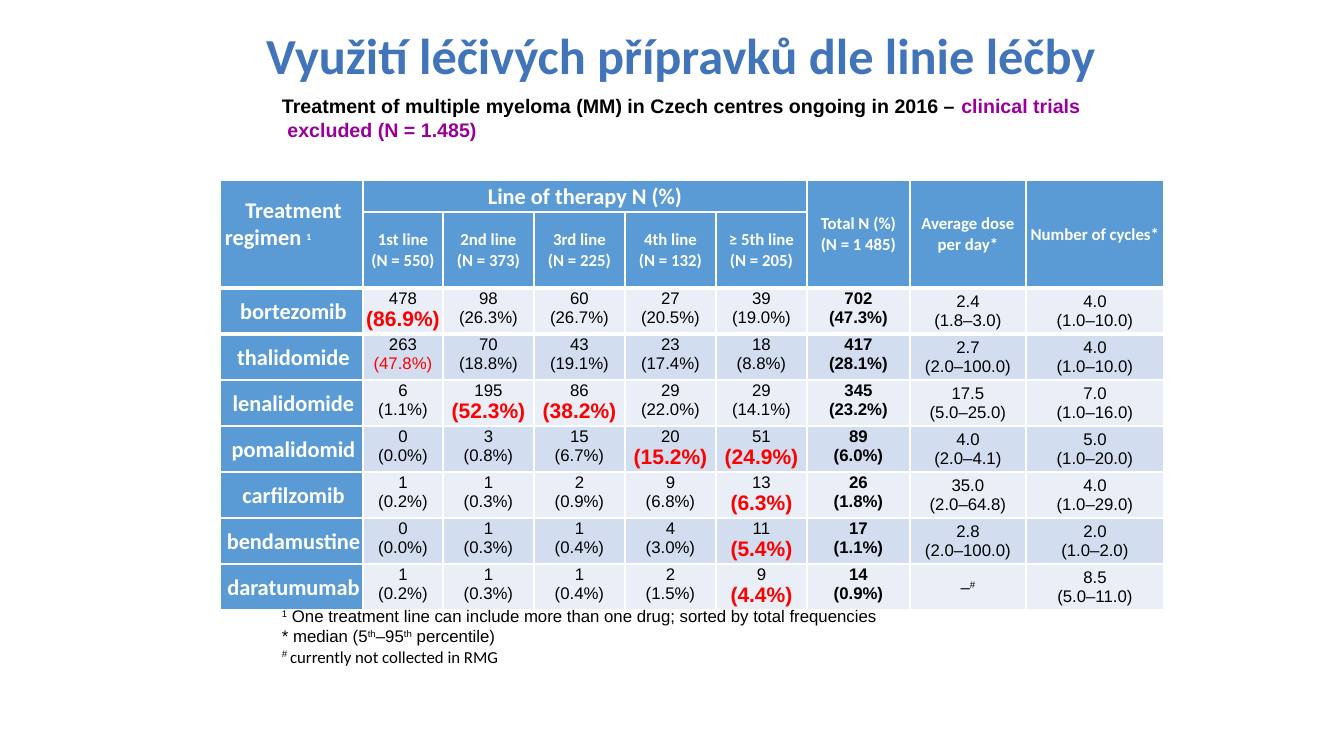
from lxml import etree
from pptx import Presentation
from pptx import util as u
from pptx.dml.color import RGBColor
from pptx.enum import text
from pptx.oxml import ns

PX = 12192000 / 1344
WHITE = RGBColor(0xFF, 0xFF, 0xFF)
BLACK = RGBColor(0, 0, 0)
RED = RGBColor(0xFF, 0, 0)
PURPLE = RGBColor(0x99, 0x00, 0x99)
TITLE_BLUE = RGBColor(0x42, 0x74, 0xB9)
HEADER_BLUE = RGBColor(0x5B, 0x9B, 0xD5)
BANDS = (RGBColor(0xEA, 0xEF, 0xF7), RGBColor(0xD2, 0xDE, 0xEF))

LEFT, CENTER = text.PP_ALIGN.LEFT, text.PP_ALIGN.CENTER
COLUMN_WIDTHS = (143, 80, 91, 91, 91, 91, 103, 116, 138)
ROW_HEIGHTS = (32, 76) + (46,) * 7
LINES = ("1st line\n(N = 550)", "2nd line\n(N = 373)", "3rd line\n(N = 225)",
         "4th line\n(N = 132)", "≥ 5th line\n(N = 205)")
SUMMARIES = ("Total N (%)\n(N = 1 485)", "Average dose per day*", "Number of cycles*")
REGIMENS = {
    "bortezomib": ("478 (86.9%)", "98 (26.3%)", "60 (26.7%)", "27 (20.5%)", "39 (19.0%)",
                   "702 (47.3%)", "2.4 (1.8–3.0)", "4.0 (1.0–10.0)"),
    "thalidomide": ("263 (47.8%)", "70 (18.8%)", "43 (19.1%)", "23 (17.4%)", "18 (8.8%)",
                    "417 (28.1%)", "2.7 (2.0–100.0)", "4.0 (1.0–10.0)"),
    "lenalidomide": ("6 (1.1%)", "195 (52.3%)", "86 (38.2%)", "29 (22.0%)", "29 (14.1%)",
                     "345 (23.2%)", "17.5 (5.0–25.0)", "7.0 (1.0–16.0)"),
    "pomalidomid": ("0 (0.0%)", "3 (0.8%)", "15 (6.7%)", "20 (15.2%)", "51 (24.9%)",
                    "89 (6.0%)", "4.0 (2.0–4.1)", "5.0 (1.0–20.0)"),
    "carfilzomib": ("1 (0.2%)", "1 (0.3%)", "2 (0.9%)", "9 (6.8%)", "13 (6.3%)",
                    "26 (1.8%)", "35.0 (2.0–64.8)", "4.0 (1.0–29.0)"),
    "bendamustine": ("0 (0.0%)", "1 (0.3%)", "1 (0.4%)", "4 (3.0%)", "11 (5.4%)",
                     "17 (1.1%)", "2.8 (2.0–100.0)", "2.0 (1.0–2.0)"),
    "daratumumab": ("1 (0.2%)", "1 (0.3%)", "1 (0.4%)", "2 (1.5%)", "9 (4.4%)",
                    "14 (0.9%)", "–#", "8.5 (5.0–11.0)"),
}
TOTAL_COLUMN = 6
BOLD_RED = {"86.9", "52.3", "38.2", "15.2", "24.9", "6.3", "5.4", "4.4"}
PLAIN_RED = {"47.8"}


def px(length):
    return u.Emu(round(length * PX))


def style(run, size=12, font="Arial", color=BLACK, bold=False, raised=False):
    run.font.size = u.Pt(size)
    run.font.name = font
    run.font.color.rgb = color
    run.font.bold = bold
    if raised:
        run._r.get_or_add_rPr().set("baseline", "30000")


def write(frame, paragraphs, align=LEFT):
    for index, pieces in enumerate(paragraphs):
        paragraph = frame.paragraphs[0] if index == 0 else frame.add_paragraph()
        paragraph.alignment = align
        for words, look in pieces:
            run = paragraph.add_run()
            run.text = words
            style(run, **look)


def place_title(slide, left, top, width, height):
    title = slide.shapes.title
    title.left, title.top, title.width, title.height = map(px, (left, top, width, height))
    frame = title.text_frame
    frame.text = "Využití léčivých přípravků dle linie léčby"
    frame.vertical_anchor = text.MSO_ANCHOR.MIDDLE
    frame.auto_size = text.MSO_AUTO_SIZE.NONE
    frame.paragraphs[0].alignment = LEFT
    frame.paragraphs[0].line_spacing = 0.9
    style(frame.paragraphs[0].runs[0], 36, "Calibri", TITLE_BLUE, True)


def place_text(slide, box, paragraphs, wrap):
    frame = slide.shapes.add_textbox(*map(px, box)).text_frame
    frame.word_wrap = wrap
    frame.auto_size = text.MSO_AUTO_SIZE.SHAPE_TO_FIT_TEXT
    write(frame, paragraphs)


def place_subtitle(slide, *box):
    black = dict(size=14, bold=True)
    purple = dict(black, color=PURPLE)
    place_text(slide, box, [
        [("Treatment of multiple myeloma (MM) in Czech centres ongoing in 2016 – ", black),
         ("clinical trials", purple)],
        [(" excluded (N = 1.485)", purple)],
    ], False)


def place_footnotes(slide, *box):
    raised = dict(raised=True)
    place_text(slide, box, [
        [("1", raised),
         (" One treatment line can include more than one drug; sorted by total frequencies", {})],
        [("* median (5", {}), ("th", raised), ("–95", {}), ("th", raised), (" percentile)", {})],
        [("# ", raised), ("currently not collected in RMG", dict(font="Calibri"))],
    ], True)


def draw_borders(cell, top, bottom):
    properties = cell._tc.get_or_add_tcPr()
    for side, points in (("L", 1), ("R", 1), ("T", top), ("B", bottom)):
        line = etree.SubElement(properties, ns.qn("a:ln" + side), w=str(u.Pt(points)))
        fill = etree.SubElement(line, ns.qn("a:solidFill"))
        etree.SubElement(fill, ns.qn("a:srgbClr"), val=str(WHITE))


def fill_cell(cell, color, paragraphs, align=CENTER, anchor=text.MSO_ANCHOR.MIDDLE):
    cell.fill.solid()
    cell.fill.fore_color.rgb = color
    cell.vertical_anchor = anchor
    cell.margin_left = cell.margin_right = cell.margin_top = px(1)
    cell.margin_bottom = 0
    write(cell.text_frame, paragraphs, align)


def header_lines(words, size=12):
    look = dict(size=size, font="Calibri", color=WHITE, bold=True)
    return [[(line, look)] for line in words.split("\n")]


def fill_header(table):
    corner = table.cell(0, 0)
    corner.merge(table.cell(1, 0))
    table.cell(0, 1).merge(table.cell(0, 5))
    regimen = header_lines("Treatment\nregimen ", 16)
    regimen[1].append(("1", dict(font="Calibri", color=WHITE, bold=True, raised=True)))
    fill_cell(corner, HEADER_BLUE, regimen)
    corner.margin_left, corner.margin_bottom = px(5), px(20)
    corner.text_frame.paragraphs[1].alignment = LEFT
    fill_cell(table.cell(0, 1), HEADER_BLUE, header_lines("Line of therapy N (%)", 16))
    for column, words in enumerate(LINES, 1):
        fill_cell(table.cell(1, column), HEADER_BLUE, header_lines(words))
    for column, words in enumerate(SUMMARIES, TOTAL_COLUMN):
        table.cell(0, column).merge(table.cell(1, column))
        fill_cell(table.cell(0, column), HEADER_BLUE, header_lines(words))


def figure_lines(figure, column):
    if figure == "–#":
        return [[("–", {}), ("#", dict(raised=True))]]
    value, detail = figure.split(" ")
    look = dict(bold=column == TOTAL_COLUMN)
    share = detail.strip("(%)")
    detail_look = look
    if column < TOTAL_COLUMN and share in BOLD_RED:
        detail_look = dict(size=15, color=RED, bold=True)
    elif column < TOTAL_COLUMN and share in PLAIN_RED:
        detail_look = dict(color=RED)
    return [[(value, look)], [(detail, detail_look)]]


def fill_regimens(table):
    for index, (drug, figures) in enumerate(REGIMENS.items()):
        name = table.cell(index + 2, 0)
        fill_cell(name, HEADER_BLUE, header_lines(drug, 16))
        name.margin_left = px(5)
        for column, figure in enumerate(figures, 1):
            anchor = text.MSO_ANCHOR.MIDDLE if column > TOTAL_COLUMN else text.MSO_ANCHOR.TOP
            fill_cell(table.cell(index + 2, column), BANDS[index % 2],
                      figure_lines(figure, column), anchor=anchor)


def place_table(slide, left, top):
    table = slide.shapes.add_table(
        len(ROW_HEIGHTS), len(COLUMN_WIDTHS), px(left), px(top),
        px(sum(COLUMN_WIDTHS)), px(sum(ROW_HEIGHTS))).table
    table.first_row = table.horz_banding = False
    for column, width in zip(table.columns, COLUMN_WIDTHS):
        column.width = px(width)
    for row, height in zip(table.rows, ROW_HEIGHTS):
        row.height = px(height)
    rules = (1, 1.5, 3, 3) + (1,) * 6
    for index, row in enumerate(table.rows):
        for cell in row.cells:
            draw_borders(cell, rules[index], rules[index + 1])
    fill_header(table)
    fill_regimens(table)


def main():
    deck = Presentation()
    deck.slide_width, deck.slide_height = px(1344), px(756)
    slide = deck.slides.add_slide(deck.slide_layouts[5])
    place_table(slide, 220, 180)
    place_title(slide, 256, 29, 900, 59)
    place_footnotes(slide, 272, 601, 908, 72)
    place_subtitle(slide, 272, 89, 822, 57)
    deck.save("out.pptx")


if __name__ == "__main__":
    main()
